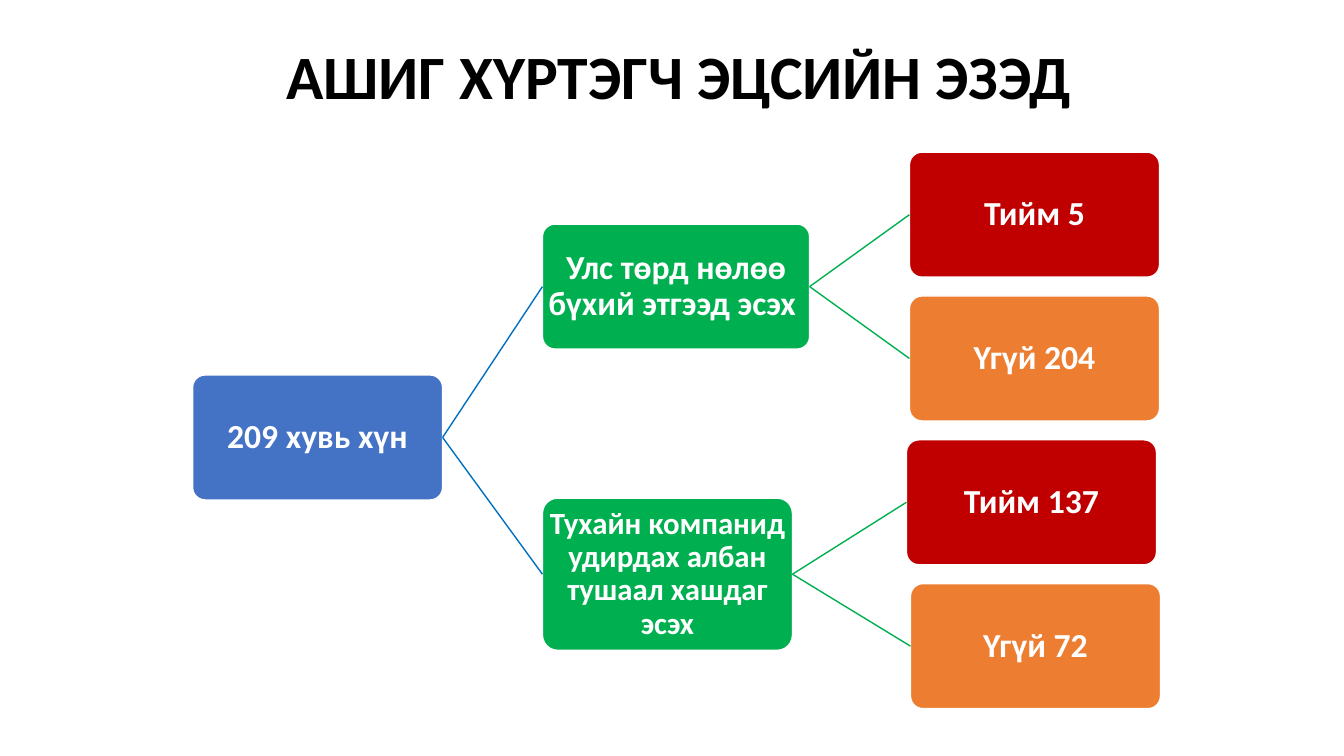
from dataclasses import dataclass

from lxml import etree
from pptx import Presentation
from pptx import util as u
from pptx.dml.color import RGBColor
from pptx.enum import shapes, text
from pptx.oxml import ns


@dataclass(frozen=True)
class Theme:
    """Colours, font and type sizes of the slide."""
    font: str = "Calibri"
    ink: str = "000000"
    paper: str = "FFFFFF"
    root: str = "4472C4"
    question: str = "00B050"
    yes: str = "C00000"
    no: str = "ED7D31"
    root_line: str = "0070C0"
    title_size: int = 44
    node_size: int = 24
    dense_size: int = 22


@dataclass(frozen=True)
class Box:
    """A rectangle in inches."""
    left: float
    top: float
    width: float
    height: float

    @property
    def right(self):
        """Right edge."""
        return self.left + self.width

    @property
    def middle(self):
        """Vertical centre."""
        return self.top + self.height / 2

    def emu(self):
        """Left, top, width and height as lengths."""
        return [u.Inches(n) for n in (self.left, self.top, self.width, self.height)]


THEME = Theme()
SLIDE = Box(0, 0, 13.33, 7.5)
TITLE = Box(0.87, 0.24, 11.87, 1.09)
TREE = Box(1.91, 1.51, 9.6, 5.52)
NODE_WIDTH, NODE_HEIGHT, GAP = 2.48, 1.24, 0.99
ROOT_DROP = 0.07

ROOT = "209 хувь хүн"
QUESTIONS = [
    dict(label="Улс төрд нөлөө бүхий этгээд эсэх ", width=2.65, height=NODE_HEIGHT,
         size=THEME.node_size,
         answers=[("Тийм 5", THEME.yes, GAP), ("Үгүй 204", THEME.no, GAP)]),
    dict(label="Тухайн компанид удирдах албан тушаал хашдаг эсэх", width=NODE_WIDTH,
         height=1.51, size=THEME.dense_size,
         answers=[("Тийм 137", THEME.yes, 1.13), ("Үгүй 72", THEME.no, 1.17)]),
]


def write(frame, words, size, color):
    """Fill a text frame with one centred bold paragraph."""
    frame.word_wrap = True
    frame.auto_size = text.MSO_AUTO_SIZE.NONE
    frame.vertical_anchor = text.MSO_ANCHOR.MIDDLE
    line = frame.paragraphs[0]
    line.text = words
    line.alignment = text.PP_ALIGN.CENTER
    line.line_spacing = 0.9
    line.font.name = THEME.font
    line.font.size = u.Pt(size)
    line.font.bold = True
    line.font.color.rgb = RGBColor.from_string(color)


def add_title(slide, box, words):
    """Place the slide title in its box."""
    title = slide.shapes.title
    title.left, title.top, title.width, title.height = box.emu()
    write(title.text_frame, words, THEME.title_size, THEME.ink)


def add_node(slide, box, words, fill, size=THEME.node_size):
    """Draw one rounded node of the tree and return its box."""
    node = slide.shapes.add_shape(shapes.MSO_SHAPE.ROUNDED_RECTANGLE, *box.emu())
    node.adjustments[0] = 0.1
    node.shadow.inherit = False
    node.fill.solid()
    node.fill.fore_color.rgb = RGBColor.from_string(fill)
    node.line.color.rgb = RGBColor.from_string(THEME.paper)
    node.line.width = u.Pt(1)
    frame = node.text_frame
    frame.margin_left = frame.margin_right = u.Inches(0.02)
    frame.margin_top = frame.margin_bottom = u.Inches(0.02)
    write(frame, words, size, fill if fill == THEME.ink else THEME.paper)
    return box


def add_branch(slide, parent, child, color):
    """Join the right side of a parent to the left side of a child."""
    ends = [u.Inches(n) for n in (parent.right, parent.middle, child.left, child.middle)]
    branch = slide.shapes.add_connector(shapes.MSO_CONNECTOR.STRAIGHT, *ends)
    branch.line.color.rgb = RGBColor.from_string(color)
    branch.line.width = u.Pt(1)
    etree.SubElement(branch._element.spPr, ns.qn("a:effectLst"))


def add_question(slide, box, question, row_step):
    """Draw a question centred on its answers and return the question's box."""
    rows = [box.top + i * row_step for i in range(len(question["answers"]))]
    middle = (rows[0] + rows[-1] + NODE_HEIGHT) / 2
    height = question["height"]
    asked = add_node(slide, Box(box.left, middle - height / 2, question["width"], height),
                     question["label"], THEME.question, question["size"])
    for top, (label, fill, gap) in zip(rows, question["answers"]):
        answer = Box(asked.right + gap, top, NODE_WIDTH, NODE_HEIGHT)
        add_branch(slide, asked, add_node(slide, answer, label, fill), THEME.question)
    return asked


def add_tree(slide, box):
    """Draw the whole tree from left to right inside its box."""
    answer_count = sum(len(question["answers"]) for question in QUESTIONS)
    row_step = (box.height - NODE_HEIGHT) / (answer_count - 1)
    root = add_node(slide, Box(box.left, box.middle - NODE_HEIGHT / 2 + ROOT_DROP,
                               NODE_WIDTH, NODE_HEIGHT), ROOT, THEME.root)
    top = box.top
    for question in QUESTIONS:
        height = row_step * len(question["answers"])
        region = Box(root.right + GAP, top, box.right - root.right - GAP, height)
        asked = add_question(slide, region, question, row_step)
        add_branch(slide, root, asked, THEME.root_line)
        top += height


def main():
    """Build and save the slide."""
    deck = Presentation()
    deck.slide_width, deck.slide_height = SLIDE.emu()[2:]
    slide = deck.slides.add_slide(deck.slide_layouts.get_by_name("Title Only"))
    add_title(slide, TITLE, "АШИГ ХҮРТЭГЧ ЭЦСИЙН ЭЗЭД ")
    add_tree(slide, TREE)
    deck.save("out.pptx")


if __name__ == "__main__":
    main()
